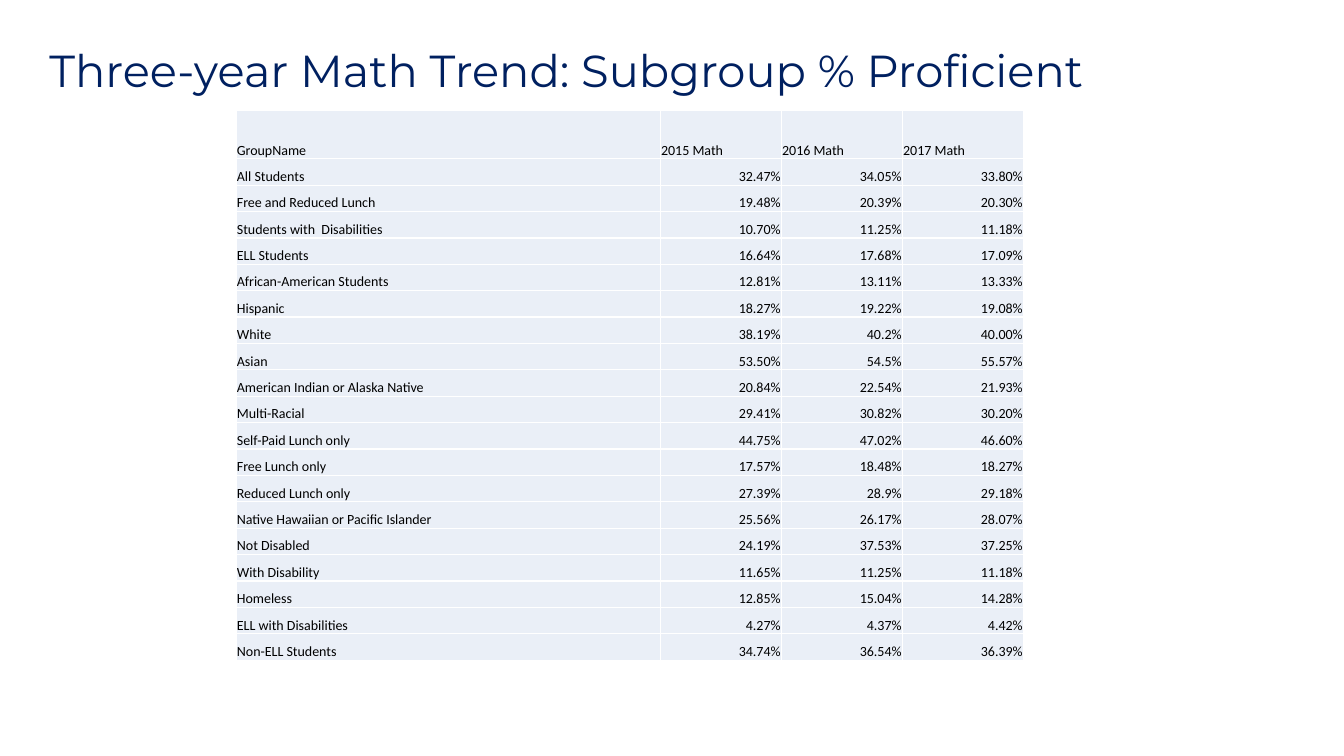
from lxml import etree
from pptx import Presentation, util as u
from pptx.dml.color import RGBColor
from pptx.enum import text
from pptx.oxml import ns

NAVY = RGBColor(0x00, 0x20, 0x60)
BLACK = RGBColor(0x00, 0x00, 0x00)
PALE_BLUE = RGBColor(0xEA, 0xEF, 0xF7)
WHITE = RGBColor(0xFF, 0xFF, 0xFF)

HEADER = ("GroupName", "2015 Math", "2016 Math", "2017 Math")
SUBGROUPS = [
    ("All Students", "32.47%", "34.05%", "33.80%"),
    ("Free and Reduced Lunch", "19.48%", "20.39%", "20.30%"),
    ("Students with  Disabilities", "10.70%", "11.25%", "11.18%"),
    ("ELL Students", "16.64%", "17.68%", "17.09%"),
    ("African-American Students", "12.81%", "13.11%", "13.33%"),
    ("Hispanic", "18.27%", "19.22%", "19.08%"),
    ("White", "38.19%", "40.2%", "40.00%"),
    ("Asian", "53.50%", "54.5%", "55.57%"),
    ("American Indian or Alaska Native", "20.84%", "22.54%", "21.93%"),
    ("Multi-Racial", "29.41%", "30.82%", "30.20%"),
    ("Self-Paid Lunch only", "44.75%", "47.02%", "46.60%"),
    ("Free Lunch only", "17.57%", "18.48%", "18.27%"),
    ("Reduced Lunch only", "27.39%", "28.9%", "29.18%"),
    ("Native Hawaiian or Pacific Islander", "25.56%", "26.17%", "28.07%"),
    ("Not Disabled", "24.19%", "37.53%", "37.25%"),
    ("With Disability", "11.65%", "11.25%", "11.18%"),
    ("Homeless", "12.85%", "15.04%", "14.28%"),
    ("ELL with Disabilities", "4.27%", "4.37%", "4.42%"),
    ("Non-ELL Students", "34.74%", "36.54%", "36.39%"),
]


class Deck:
    """Holds the presentation, its current slide and the text styles."""
    title_font, title_size = "Montserrat", u.Pt(32)
    table_font, table_size = "Calibri", u.Pt(10)

    def __init__(self):
        self.prs = Presentation()
        self.prs.slide_width, self.prs.slide_height = u.Cm(33.87), u.Cm(19.05)
        self.s = self.prs.slides.add_slide(self.prs.slide_layouts[5])

    def style(self, p, name, size, color):
        for r in p.runs:
            r.font.name, r.font.size, r.font.bold = name, size, False
            r.font.color.rgb = color

    def title(self, wording, left, top, width, height):
        sp = self.s.shapes.title
        sp.left, sp.top, sp.width, sp.height = map(u.Cm, (left, top, width, height))
        tf = sp.text_frame
        tf.text = wording
        tf.word_wrap = True
        tf.auto_size = text.MSO_AUTO_SIZE.NONE
        tf.vertical_anchor = text.MSO_ANCHOR.MIDDLE
        p = tf.paragraphs[0]
        p.alignment, p.line_spacing = text.PP_ALIGN.LEFT, 0.9
        self.style(p, self.title_font, self.title_size, NAVY)

    def borders(self, cell):
        """Draw a thin white line on all four sides of a cell."""
        tc_pr = cell._tc.get_or_add_tcPr()
        for side in ("a:lnL", "a:lnR", "a:lnT", "a:lnB"):
            ln = etree.SubElement(tc_pr, ns.qn(side), w=str(u.Pt(1)))
            fill = etree.SubElement(ln, ns.qn("a:solidFill"))
            etree.SubElement(fill, ns.qn("a:srgbClr"), val=str(WHITE))

    def cell(self, cell, wording, align):
        self.borders(cell)
        cell.fill.solid()
        cell.fill.fore_color.rgb = PALE_BLUE
        cell.margin_left = cell.margin_right = cell.margin_top = u.Cm(0.02)
        cell.margin_bottom = 0
        cell.vertical_anchor = text.MSO_ANCHOR.BOTTOM
        cell.text_frame.text = wording
        p = cell.text_frame.paragraphs[0]
        p.alignment = align
        self.style(p, self.table_font, self.table_size, BLACK)

    def table(self, rows, left, top, col_widths, row_heights):
        frame = self.s.shapes.add_table(
            len(rows), len(col_widths), u.Cm(left), u.Cm(top),
            u.Cm(sum(col_widths)), u.Cm(sum(row_heights)))
        tbl = frame.table
        tbl.first_row = tbl.horz_banding = False
        for col, width in zip(tbl.columns, col_widths):
            col.width = u.Cm(width)
        for i, (row, height) in enumerate(zip(tbl.rows, row_heights)):
            row.height = u.Cm(height)
            for j, wording in enumerate(rows[i]):
                is_value = i > 0 and j > 0
                align = text.PP_ALIGN.RIGHT if is_value else text.PP_ALIGN.LEFT
                self.cell(tbl.cell(i, j), wording, align)


def main():
    deck = Deck()
    deck.title("Three-year Math Trend: Subgroup % Proficient", 0.99, 0.56, 32.11, 2.54)
    header_height, table_height = 1.23, 13.88
    row_height = (table_height - header_height) / len(SUBGROUPS)
    deck.table([HEADER] + SUBGROUPS, 5.95, 2.77, [10.69] + [3.05] * 3,
               [header_height] + [row_height] * len(SUBGROUPS))
    deck.prs.save("out.pptx")


if __name__ == "__main__":
    main()
